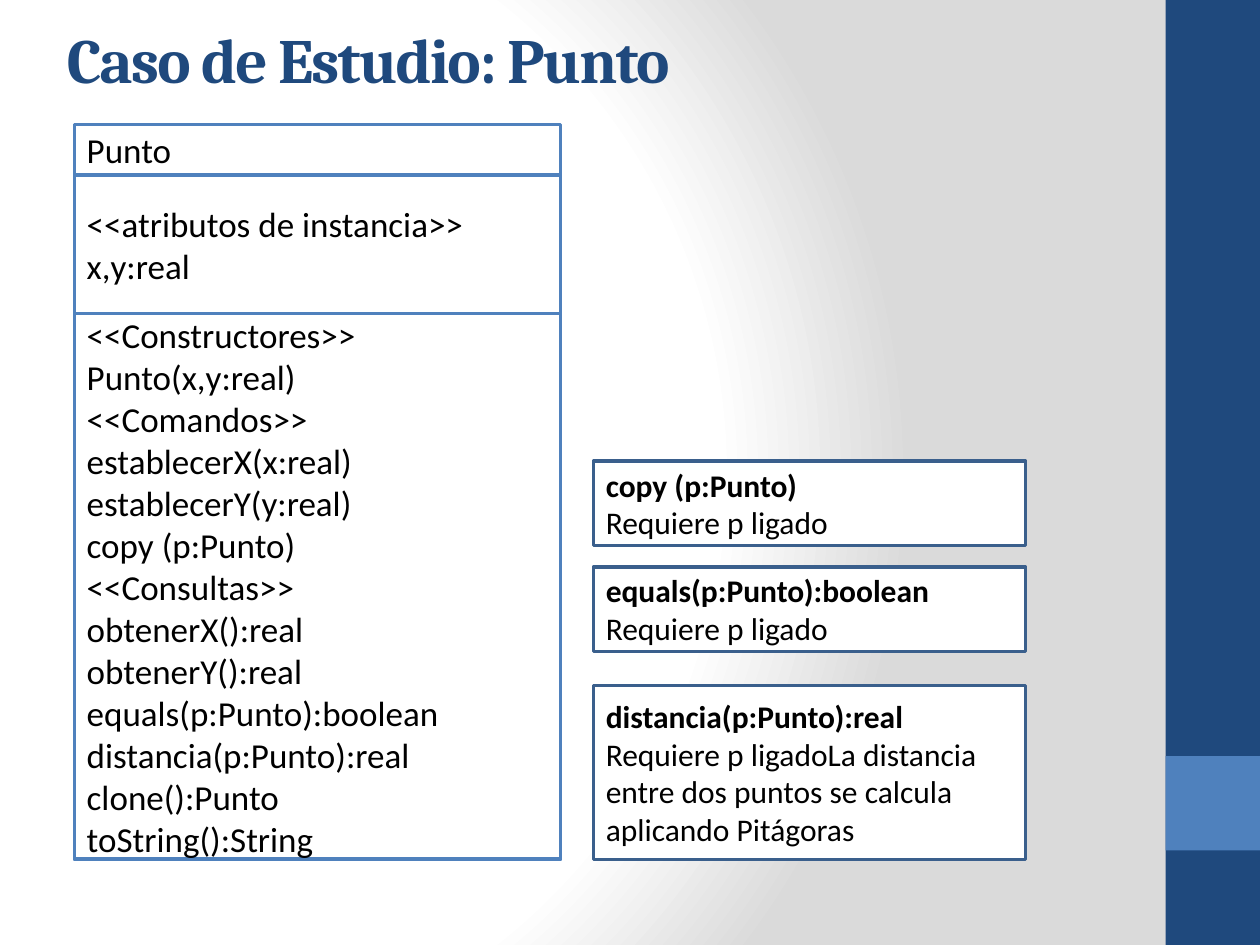
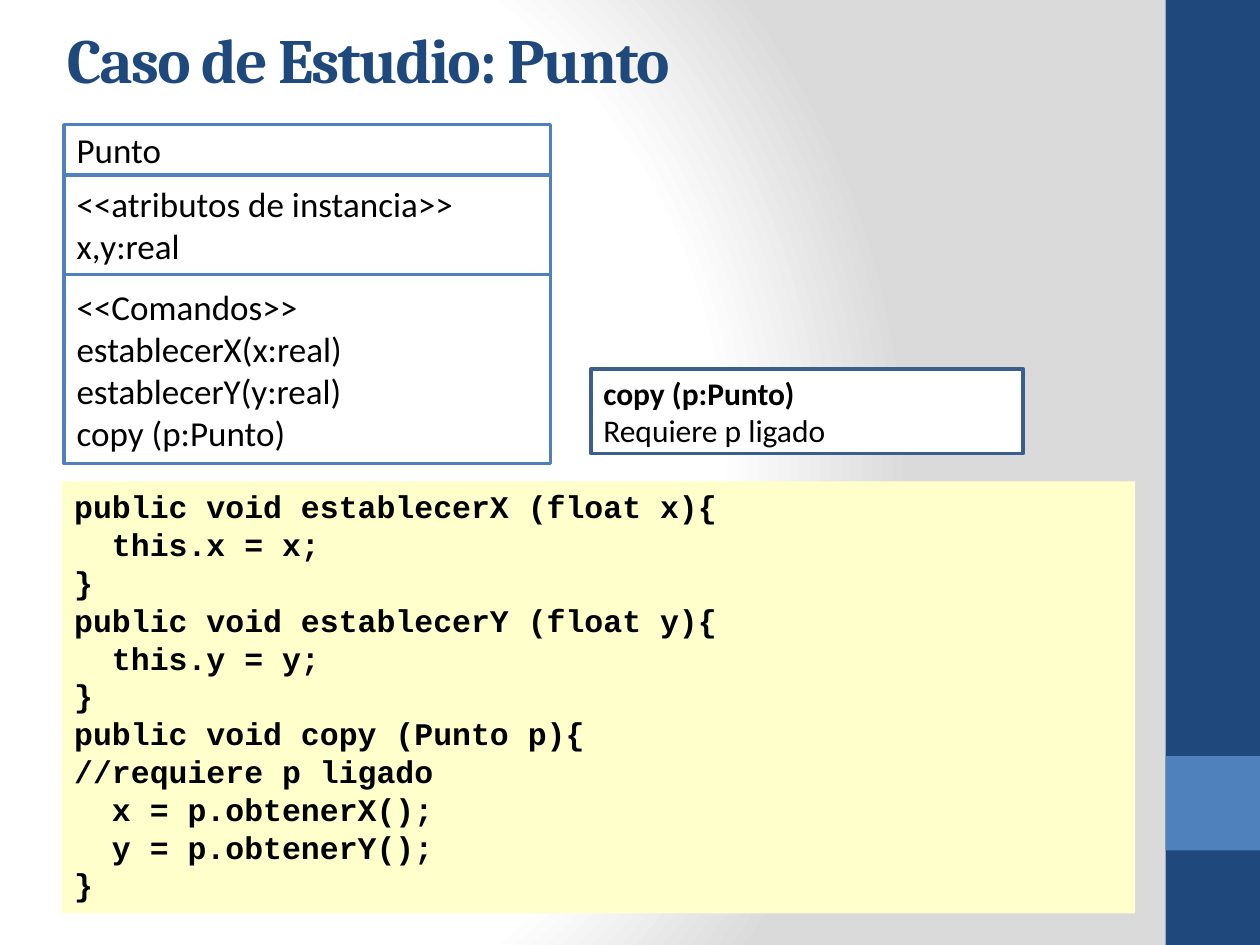
import pptx
import pptx.util
import pptx.dml.color
import pptx.enum.shapes
import pptx.enum.text
import pptx.oxml
import pptx.oxml.ns

NAVY, BLUE, STEEL = "1F497D", "4F81BD", "3A5F8C"
WHITE, GREY, BLACK, CREAM = "FFFFFF", "DADADA", "000000", "FFFFCC"
ANCHOR = pptx.enum.text.MSO_ANCHOR
LEFT = pptx.enum.text.PP_ALIGN.LEFT

deck = pptx.Presentation()
deck.slide_width = pptx.util.Inches(10)
deck.slide_height = pptx.util.Inches(7.5)
cell = deck.slide_width // 100  # grid of 100 columns and 75 rows


def paint(form, shade):
    """Give a fill or a font a colour from a hex string."""
    if hasattr(form, "solid"):
        form.solid()
        form.fore_color.rgb = pptx.dml.color.RGBColor.from_string(shade)
    else:
        form.color.rgb = pptx.dml.color.RGBColor.from_string(shade)


def box(slide, place, fill, edge=None, lines=(), size=20, bold=0,
        face="Calibri", anchor=ANCHOR.MIDDLE):
    """Draw a rectangle; the first `bold` lines of its text are bold."""
    shape = slide.shapes.add_shape(
        pptx.enum.shapes.MSO_SHAPE.RECTANGLE, *[int(n * cell) for n in place])
    shape.shadow.inherit = False
    paint(shape.fill, fill)
    if edge:
        paint(shape.line.fill, edge)
        shape.line.width = pptx.util.Pt(2)
    else:
        shape.line.fill.background()
    frame = shape.text_frame
    frame.word_wrap = True
    frame.vertical_anchor = anchor
    for i, line in enumerate(lines):
        para = frame.paragraphs[0] if i == 0 else frame.add_paragraph()
        para.text = line
        para.alignment = LEFT
        para.font.name = face
        para.font.size = pptx.util.Pt(size)
        para.font.bold = i < bold
        paint(para.font, BLACK)
    return shape


# Two slides with the same title
layout = deck.slide_layouts[5]
slides = [deck.slides.add_slide(layout) for _ in range(2)]
for slide in slides:
    title = slide.shapes.title
    title.left, title.top, title.width, title.height = [
        int(n * cell) for n in (4.3, 0.5, 82.5, 7.6)]
    frame = title.text_frame
    frame.text = "Caso de Estudio: Punto"
    frame.vertical_anchor = ANCHOR.BOTTOM
    frame.auto_size = pptx.enum.text.MSO_AUTO_SIZE.NONE
    para = frame.paragraphs[0]
    para.alignment = LEFT
    para.font.name = "Cambria"
    para.font.size = pptx.util.Pt(36)
    para.font.bold = True
    paint(para.font, NAVY)
    para.runs[0].font.bold = True
    para.runs[0].font.element.set("spc", "-100") if hasattr(
        para.runs[0].font, "element") else para.runs[0]._r.get_or_add_rPr().set("spc", "-100")

# Master: round gradient behind, side bands at the right
master = deck.slide_master
master.background.fill.gradient()
old = master.element.find(".//" + pptx.oxml.ns.qn("a:gradFill"))
stops = "".join(
    f'<a:gs pos="{spot * 1000}"><a:srgbClr val="{shade}"/></a:gs>'
    for spot, shade in ((0, WHITE), (75, WHITE), (100, GREY)))
old.getparent().replace(old, pptx.oxml.parse_xml(
    f'<a:gradFill {pptx.oxml.ns.nsdecls("a")} rotWithShape="1">'
    f'<a:gsLst>{stops}</a:gsLst><a:path path="circle">'
    '<a:fillToRect l="20000" t="50000" r="100000" b="50000"/>'
    '</a:path></a:gradFill>'))
bands = [((92.5, 0, 7.5, 75), NAVY), ((92.5, 60, 7.5, 7.5), BLUE)]
for i, (place, shade) in enumerate(bands):
    band = box(slides[0], place, shade)
    master.shapes.element.insert(2 + i, band.element)

# Class diagrams: stacked parts, each with its height in rows
head = ["Punto"]
state = ["<<atributos de instancia>>", "x,y:real"]
build = ["<<Constructores>>", "Punto(x,y:real)"]
orders = ["<<Comandos>>", "establecerX(x:real)", "establecerY(y:real)",
          "copy (p:Punto)"]
asks = ["<<Consultas>>", "obtenerX():real", "obtenerY():real",
        "equals(p:Punto):boolean", "distancia(p:Punto):real",
        "clone():Punto", "toString():String"]
charts = [
    (5.9, [(4, head), (11, state), (43.3, build + orders + asks)]),
    (5.1, [(4, head), (7.9, state), (15, orders)]),
]
for slide, (left, parts) in zip(slides, charts):
    top = 9.9
    for tall, lines in parts:
        box(slide, (left, top, 38.6, tall), WHITE, BLUE, lines)
        top += tall

# Notes on what each method needs
need = "Requiere p ligado"
far = need + "La distancia entre dos puntos se calcula aplicando Pitágoras"
cards = [
    (0, 47.1, 36.6, 6.7, "copy (p:Punto)", need),
    (0, 47.1, 45, 6.7, "equals(p:Punto):boolean", need),
    (0, 47.1, 54.4, 13.8, "distancia(p:Punto):real", far),
    (1, 46.9, 29.3, 6.7, "copy (p:Punto)", need),
]
for page, left, top, tall, name, rule in cards:
    box(slides[page], (left, top, 34.3, tall), WHITE, STEEL,
        [name, rule], size=18, bold=1)

# Code panel: True marks an indented line
code = [
    ("public void establecerX (float x){", False),
    ("this.x = x;", True),
    ("}", False),
    ("public void establecerY (float y){", False),
    ("this.y = y;", True),
    ("}", False),
    ("public void copy (Punto p){", False),
    ("//requiere p ligado", False),
    ("x = p.obtenerX();", True),
    ("y = p.obtenerY();", True),
    ("}", False),
]
panel = box(slides[1], (4.9, 38.2, 85.2, 34.3), CREAM,
            lines=[line for line, _ in code], size=18, bold=len(code),
            face="Courier New", anchor=ANCHOR.TOP)
for para, (_, inner) in zip(panel.text_frame.paragraphs, code):
    if inner:
        para._p.get_or_add_pPr().set("marL", str(3 * cell))

deck.save("out.pptx")
